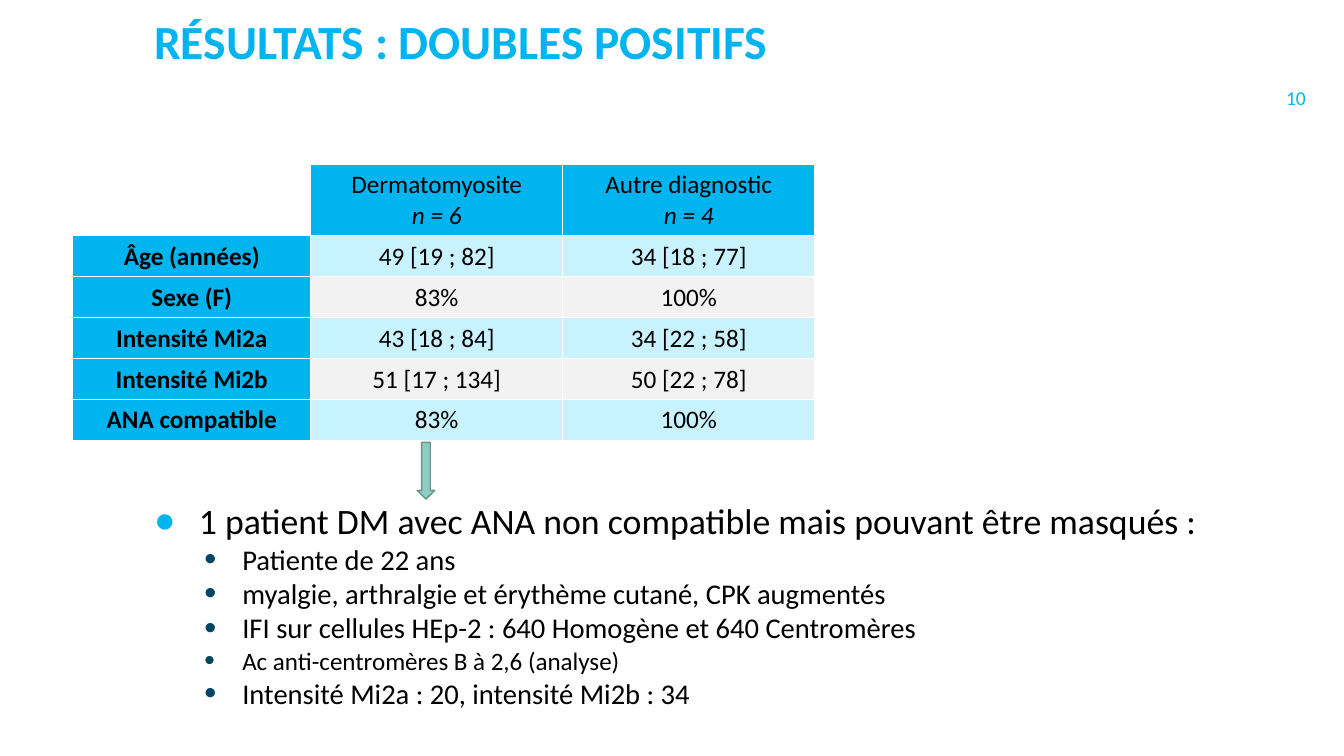
from lxml.etree import SubElement
from pptx import Presentation
from pptx.dml.color import RGBColor
from pptx.enum.shapes import MSO_SHAPE
from pptx.enum.text import MSO_ANCHOR, PP_ALIGN
from pptx.oxml.ns import qn
from pptx.util import Pt

COLORS = {
    "accent": "00B5EF",
    "text": "000000",
    "bullet": "004562",
    "border": "FFFFFF",
    "light_blue": "C9F2FF",
    "light_gray": "F2F2F2",
    "arrow": "8DCCC0",
    "arrow_line": "68978E",
}
FONT = "Calibri"
HEADERS = [("Dermatomyosite", "n = 6"), ("Autre diagnostic", "n = 4")]
ROWS = [
    ("Âge (années)", "49 [19 ; 82]", "34 [18 ; 77]"),
    ("Sexe (F)", "83%", "100%"),
    ("Intensité Mi2a", "43 [18 ; 84]", "34 [22 ; 58]"),
    ("Intensité Mi2b", "51 [17 ; 134]", "50 [22 ; 78]"),
    ("ANA compatible", "83%", "100%"),
]
PATIENT_HEADING = "1 patient DM avec ANA non compatible mais pouvant être masqués :"
PATIENT_DETAILS = [
    ("Patiente de 22 ans", 20.4),
    ("myalgie, arthralgie et érythème cutané, CPK augmentés", 20.4),
    ("IFI sur cellules HEp-2 : 640 Homogène et 640 Centromères", 20.4),
    ("Ac anti-centromères B à 2,6 (analyse)", 17.9),
    ("Intensité Mi2a : 20, intensité Mi2b : 34", 20.4),
]


def color(name):
    return RGBColor.from_string(COLORS[name])


def add_bullet(para, char, color_name, percent, left, hanging):
    properties = para._p.get_or_add_pPr()
    properties.set("marL", str(Pt(left)))
    properties.set("indent", str(-Pt(hanging)))
    bullet_color = SubElement(properties, qn("a:buClr"))
    SubElement(bullet_color, qn("a:srgbClr")).set("val", COLORS[color_name])
    SubElement(properties, qn("a:buSzPct")).set("val", str(percent * 1000))
    SubElement(properties, qn("a:buFont")).set("typeface", "Arial")
    SubElement(properties, qn("a:buChar")).set("char", char)


def write(frame, text, size=18, color_name="text", bold=False, italic=False,
          align=PP_ALIGN.LEFT, level=0, bullet=None, line_spacing=None, space_before=0):
    first = not frame.paragraphs[0].runs
    para = frame.paragraphs[0] if first else frame.add_paragraph()
    para.alignment = align
    para.level = level
    if line_spacing:
        para.line_spacing = line_spacing
    if space_before and not first:
        para.space_before = Pt(space_before)
    if bullet:
        add_bullet(para, *bullet)
    span = para.add_run()
    span.text = text
    span.font.name = FONT
    span.font.size = Pt(size)
    span.font.bold = bold
    span.font.italic = italic
    span.font.color.rgb = color(color_name)


def add_text_box(page, left, top, width, height, anchor=MSO_ANCHOR.TOP):
    box = page.shapes.add_textbox(Pt(left), Pt(top), Pt(width), Pt(height))
    frame = box.text_frame
    frame.word_wrap = True
    frame.vertical_anchor = anchor
    return frame


def add_title(page, left, top, width, height):
    frame = add_text_box(page, left, top, width, height, MSO_ANCHOR.MIDDLE)
    write(frame, "RÉSULTATS : DOUBLES POSITIFS", size=34, color_name="accent", bold=True)


def add_page_number(page, left, top, width, height):
    frame = add_text_box(page, left, top, width, height, MSO_ANCHOR.MIDDLE)
    write(frame, "10", size=14, color_name="accent")


def style_cell(cell, fill_name):
    cell.vertical_anchor = MSO_ANCHOR.MIDDLE
    properties = cell._tc.get_or_add_tcPr()
    for side in ("lnL", "lnR", "lnT", "lnB"):
        line = SubElement(properties, qn(f"a:{side}"), w=str(Pt(1)))
        fill = SubElement(line, qn("a:solidFill"))
        SubElement(fill, qn("a:srgbClr")).set("val", COLORS["border"])
    if fill_name:
        cell.fill.solid()
        cell.fill.fore_color.rgb = color(fill_name)
    else:
        cell.fill.background()


def add_results_table(page, left, top, width, height):
    header_height = 51
    label_width = 170
    row_count, column_count = len(ROWS) + 1, len(HEADERS) + 1
    table = page.shapes.add_table(row_count, column_count, Pt(left), Pt(top),
                                  Pt(width), Pt(height)).table
    table.first_row = False
    table.horz_banding = False
    for index, column in enumerate(table.columns):
        column.width = Pt((width - label_width) / len(HEADERS) if index else label_width)
    for index, row in enumerate(table.rows):
        row.height = Pt((height - header_height) / len(ROWS) if index else header_height)

    style_cell(table.cell(0, 0), None)
    for column, (diagnosis, count) in enumerate(HEADERS, 1):
        cell = table.cell(0, column)
        style_cell(cell, "accent")
        write(cell.text_frame, diagnosis, align=PP_ALIGN.CENTER)
        write(cell.text_frame, count, italic=True, align=PP_ALIGN.CENTER)
    for row, values in enumerate(ROWS, 1):
        band = "light_blue" if row % 2 else "light_gray"
        for column, value in enumerate(values):
            cell = table.cell(row, column)
            style_cell(cell, band if column else "accent")
            write(cell.text_frame, value, bold=column == 0, align=PP_ALIGN.CENTER)


def add_arrow(page, left, top, width, height):
    arrow = page.shapes.add_shape(MSO_SHAPE.DOWN_ARROW, Pt(left), Pt(top),
                                  Pt(width), Pt(height))
    arrow.shadow.inherit = False
    arrow.fill.solid()
    arrow.fill.fore_color.rgb = color("arrow")
    arrow.line.color.rgb = color("arrow_line")
    arrow.line.width = Pt(1)


def add_patient_notes(page, left, top, width, height):
    frame = add_text_box(page, left, top, width, height)
    write(frame, PATIENT_HEADING, size=25.5, line_spacing=0.8,
          bullet=("●", "accent", 100, 32, 32))
    for text, size in PATIENT_DETAILS:
        write(frame, text, size=size, align=PP_ALIGN.JUSTIFY, level=1, line_spacing=0.8,
              space_before=5, bullet=("•", "bullet", 120, 63, 27))


def main():
    deck = Presentation()
    deck.slide_width = Pt(960)
    deck.slide_height = Pt(540)
    page = deck.slides.add_slide(deck.slide_layouts[6])
    add_page_number(page, 911.5, 46, 48, 48)
    add_patient_notes(page, 103, 358.5, 784, 163.5)
    add_title(page, 103, 5, 798, 48)
    add_results_table(page, 52, 117.5, 530, 197.5)
    add_arrow(page, 298, 316, 12.5, 40.5)
    deck.save("out.pptx")


if __name__ == "__main__":
    main()
